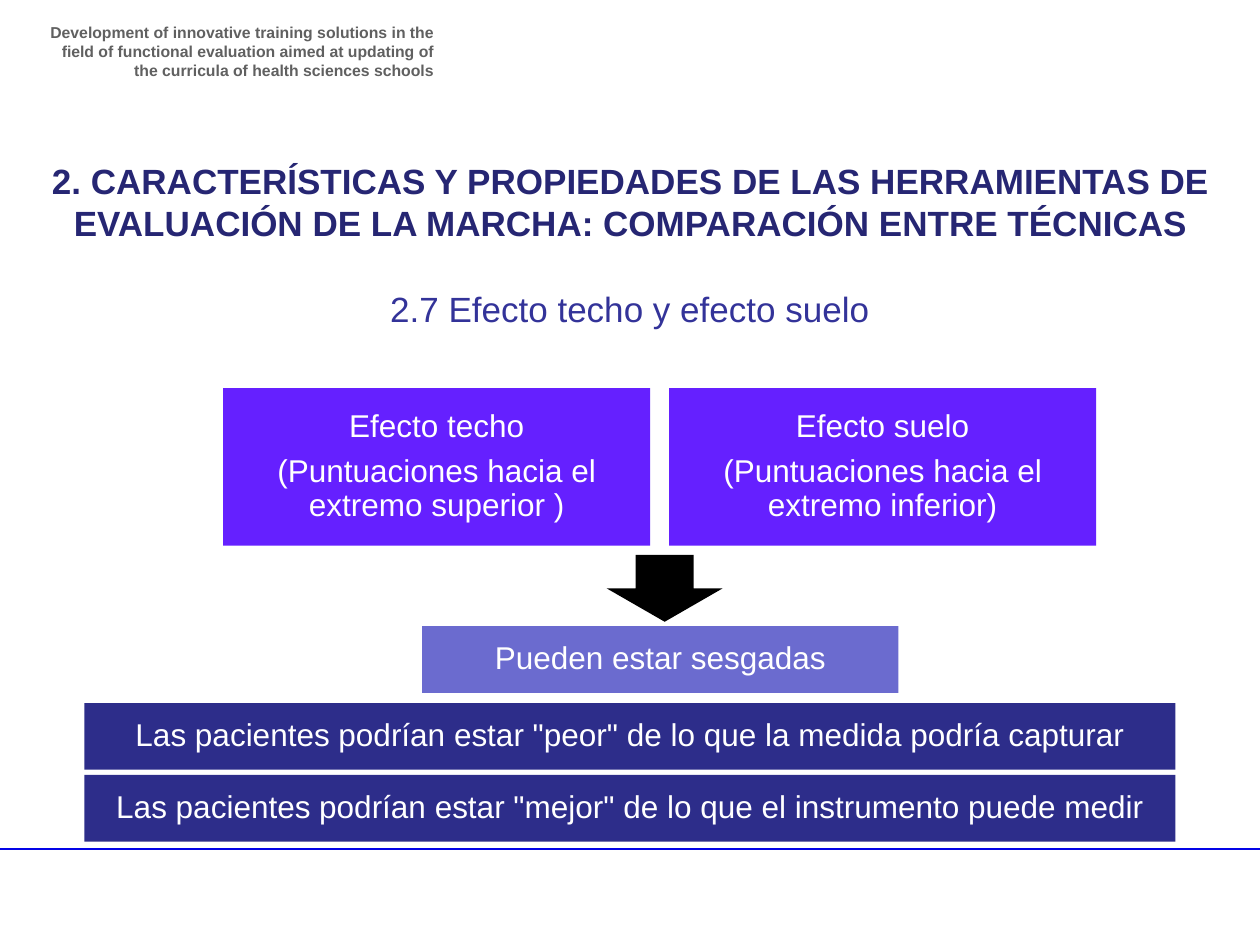
import pptx
import pptx.util
import pptx.dml.color
import pptx.enum.shapes
import pptx.enum.text
import pptx.oxml.ns
import lxml.etree

Inches = pptx.util.Inches
Pt = pptx.util.Pt
ALIGN = pptx.enum.text.PP_ALIGN
SHAPE = pptx.enum.shapes.MSO_SHAPE


def rgb(hex_color):
    return pptx.dml.color.RGBColor.from_string(hex_color)


def write(frame, text, size, color, align=ALIGN.CENTER, bold=False):
    """Fill a text frame, one paragraph per line of text."""
    frame.word_wrap = True
    frame.text = text
    for paragraph in frame.paragraphs:
        paragraph.alignment = align
        for run in paragraph.runs:
            run.font.name = "Arial"
            run.font.size = Pt(size)
            run.font.bold = bold
            run.font.color.rgb = rgb(color)


deck = pptx.Presentation()
deck.slide_width = Inches(10)
deck.slide_height = Inches(7.5)
slide = deck.slides.add_slide(deck.slide_layouts[6])
shapes = slide.shapes

footer_rule = shapes.add_connector(
    pptx.enum.shapes.MSO_CONNECTOR.STRAIGHT,
    Inches(-0.05), Inches(6.74), Inches(10), Inches(6.74))
footer_rule.line.color.rgb = rgb("0404E6")
footer_rule.line.width = Pt(1)
lxml.etree.SubElement(footer_rule._element.spPr, pptx.oxml.ns.qn("a:effectLst"))

project = shapes.add_textbox(Inches(0.28), Inches(0.13), Inches(3.26), Inches(0.47))
write(project.text_frame,
      "Development of innovative training solutions in the ﬁeld of functional "
      "evaluation aimed at updating of the curricula of health sciences schools",
      9, "606060", ALIGN.RIGHT, bold=True)

# left, top, width, height, fill, text
boxes = [
    (1.77, 3.08, 3.39, 1.25, "6520FF",
     "Efecto techo\n(Puntuaciones hacia el extremo superior )"),
    (5.31, 3.08, 3.39, 1.25, "6520FF",
     "Efecto suelo\n(Puntuaciones hacia el extremo inferior)"),
    (3.35, 4.97, 3.78, 0.53, "6B6BCF", "Pueden estar sesgadas"),
    (0.67, 5.58, 8.66, 0.53, "2D2D8A",
     'Las pacientes podrían estar "peor" de lo que la medida podría capturar'),
    (0.67, 6.15, 8.66, 0.53, "2D2D8A",
     'Las pacientes podrían estar "mejor" de lo que el instrumento puede medir'),
]
for left, top, width, height, fill, text in boxes:
    box = shapes.add_shape(SHAPE.RECTANGLE, Inches(left), Inches(top),
                           Inches(width), Inches(height))
    box.shadow.inherit = False
    box.fill.solid()
    box.fill.fore_color.rgb = rgb(fill)
    box.line.fill.background()
    frame = box.text_frame
    frame.vertical_anchor = pptx.enum.text.MSO_ANCHOR.MIDDLE
    frame.margin_left = frame.margin_right = Inches(0.01)
    frame.margin_top = frame.margin_bottom = Inches(0.01)
    write(frame, text, 18, "FFFFFF")
    for paragraph in frame.paragraphs:
        paragraph.line_spacing = 0.9
        paragraph.space_after = Pt(6.3)

arrow = shapes.add_shape(SHAPE.RIGHT_ARROW, Inches(5.01), Inches(4.21),
                         Inches(0.53), Inches(0.92))
arrow.rotation = 90
arrow.shadow.inherit = False
arrow.fill.solid()
arrow.fill.fore_color.rgb = rgb("000000")
arrow.line.fill.background()

title = shapes.add_textbox(Inches(0.28), Inches(1.22), Inches(9.45), Inches(0.77))
write(title.text_frame,
      "2. CARACTERÍSTICAS Y PROPIEDADES DE LAS HERRAMIENTAS DE EVALUACIÓN "
      "DE LA MARCHA: COMPARACIÓN ENTRE TÉCNICAS",
      20, "262673", bold=True)

subtitle = shapes.add_textbox(Inches(1.38), Inches(2.23), Inches(7.24), Inches(0.44))
write(subtitle.text_frame, "2.7 Efecto techo y efecto suelo", 20, "333399")

for heading in (title, subtitle):
    heading.text_frame.auto_size = pptx.enum.text.MSO_AUTO_SIZE.SHAPE_TO_FIT_TEXT

deck.save("out.pptx")
